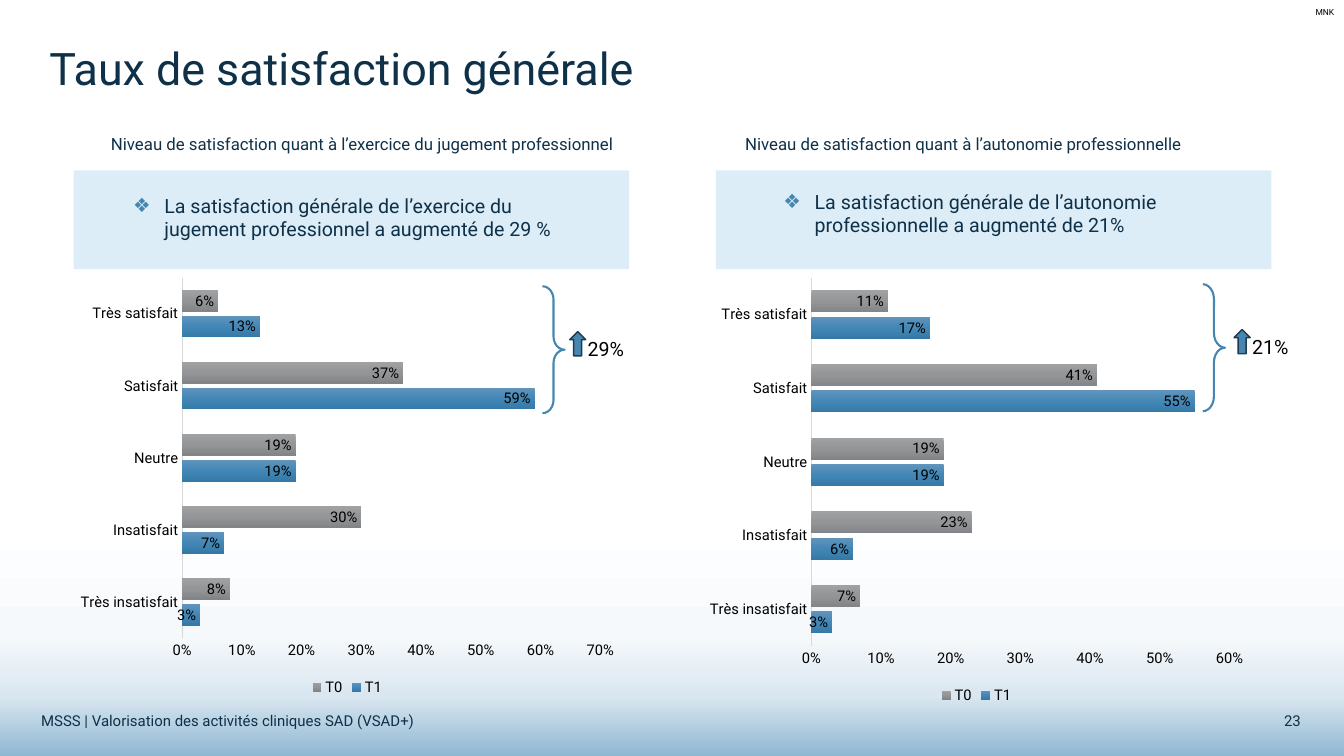
from lxml import etree
from pptx import Presentation
from pptx import util as u
from pptx.chart.data import CategoryChartData
from pptx.dml.color import RGBColor
from pptx.enum import chart as ch, shapes, text
from pptx.oxml.ns import qn

UNIT = 0.1
FONT = "Roboto"
NAVY, BLUE, BLACK = "0E3149", "4786B1", "000000"
CATEGORIES = ["Très insatisfait", "Insatisfait", "Neutre", "Satisfait", "Très satisfait"]
BACKDROP = [(69, "FFFFFF"), (84, "F6F9FB"), (92, "DAE7F0"), (100, "8FB7D2")]
T0_STOPS = [(0, "9FA1A2"), (50, "939597"), (100, "828487")]
T1_STOPS = [(0, "6194BC"), (50, "4287B6"), (100, "3679A7")]


def color(value):
    """Turn a hex string into a colour."""
    return RGBColor.from_string(value)


def grid(*cells):
    """Turn grid columns and rows into lengths."""
    return [u.Inches(c * UNIT) for c in cells]


def style(font, size, value=BLACK):
    """Set the typeface, size and colour of a font."""
    font.name, font.size, font.bold = FONT, u.Pt(size), False
    font.color.rgb = color(value)


def shade(fill, element, stops):
    """Fill from top to bottom with a list of colour stops."""
    fill.gradient()
    fill.gradient_angle = 270
    gs_list = next(element.iter(qn("a:gsLst")))
    for gs in list(gs_list):
        gs_list.remove(gs)
    for share, value in stops:
        gs = etree.SubElement(gs_list, qn("a:gs"), pos=str(share * 1000))
        etree.SubElement(gs, qn("a:srgbClr"), val=value)


def fill_placeholder(sp, cells, words, size):
    """Place a placeholder on the grid and write its paragraph."""
    sp.left, sp.top, sp.width, sp.height = grid(*cells)
    tf = sp.text_frame
    tf.text = words
    tf.auto_size = text.MSO_AUTO_SIZE.NONE
    tf.vertical_anchor = text.MSO_ANCHOR.TOP
    p = tf.paragraphs[0]
    p.alignment, p.space_before = text.PP_ALIGN.LEFT, u.Pt(0)
    return tf, p


def add_title(s, words):
    """Write the slide title."""
    tf, p = fill_placeholder(s.shapes.title, (3.9, 3.6, 125.5, 6.8), words, 32)
    tf.vertical_anchor = text.MSO_ANCHOR.MIDDLE
    p.line_spacing = 0.9
    style(p.font, 32, NAVY)


def add_heading(sp, col, words):
    """Write the heading above a chart."""
    _, p = fill_placeholder(sp, (col, 12.8, 55.1, 3), words, 12)
    style(p.font, 12, NAVY)


def add_finding(sp, col, inset, words):
    """Write a bulleted finding on a pale panel."""
    left, top, right = inset
    tf, p = fill_placeholder(sp, (col, 16.9, 55.1, 9.8), words, 14)
    sp.fill.solid()
    sp.fill.fore_color.rgb = color("DCEDF8")
    tf.margin_left, tf.margin_top, tf.margin_right = grid(left, top, right)
    pr = p._p.get_or_add_pPr()
    pr.set("marL", str(u.Inches(0.31)))
    pr.set("indent", str(-u.Inches(0.31)))
    bullet_color = etree.SubElement(pr, qn("a:buClr"))
    etree.SubElement(bullet_color, qn("a:srgbClr"), val=BLUE)
    etree.SubElement(pr, qn("a:buChar"), char="❖")
    style(p.font, 14, NAVY)


def add_text(s, cells, words, size, value=BLACK, align=text.PP_ALIGN.LEFT):
    """Add a one-line text box."""
    tf = s.shapes.add_textbox(*grid(*cells)).text_frame
    tf.word_wrap = True
    p = tf.paragraphs[0]
    p.text, p.alignment = words, align
    style(p.font, size, value)


def add_bars(s, cells, top_value, t0, t1):
    """Add a clustered bar chart of T0 against T1."""
    data = CategoryChartData(number_format="0%")
    data.categories = CATEGORIES
    data.add_series("T1", t1)
    data.add_series("T0", t0)
    chart = s.shapes.add_chart(ch.XL_CHART_TYPE.BAR_CLUSTERED, *grid(*cells), data).chart
    style(chart.font, 10.5)
    chart.has_title = False
    chart.has_legend = True
    chart.legend.position = ch.XL_LEGEND_POSITION.BOTTOM
    chart.legend.include_in_layout = False
    for axis in (chart.category_axis, chart.value_axis):
        axis.has_major_gridlines = False
        axis.major_tick_mark = axis.minor_tick_mark = ch.XL_TICK_MARK.NONE
    chart.category_axis.format.line.color.rgb = color("D9D9D9")
    chart.category_axis.format.line.width = u.Pt(1)
    axis = chart.value_axis
    axis.format.line.fill.background()
    axis.minimum_scale, axis.maximum_scale, axis.major_unit = 0, top_value, 0.1
    axis.tick_labels.number_format = "0%"
    axis.tick_labels.number_format_is_linked = False
    plot = chart.plots[0]
    plot.gap_width, plot.overlap, plot.vary_by_categories = 115, -20, False
    for series, stops in zip(plot.series, (T1_STOPS, T0_STOPS)):
        shade(series.format.fill, series._element, stops)
        labels = series.data_labels
        labels.show_value = True
        labels.position = ch.XL_LABEL_POSITION.INSIDE_END
        labels.number_format, labels.number_format_is_linked = "0%", False
        style(labels.font, 10.5)


def add_outline(s, kind, cells, line, width):
    """Add an unfilled preset shape."""
    sp = s.shapes.add_shape(kind, *grid(*cells))
    sp.shadow.inherit = False
    sp.fill.background()
    sp.line.color.rgb = color(line)
    sp.line.width = u.Pt(width)
    return sp


def add_increase(s, col, row, arrow_col, bend, words):
    """Bracket the satisfied answers and state their increase."""
    brace = add_outline(s, shapes.MSO_SHAPE.RIGHT_BRACE, (col, row, 2.2, 12.6), BLUE, 1.5)
    brace.adjustments[0] = bend
    add_text(s, (arrow_col + 0.8, row + 4.5, 7, 3.4), words, 14)
    arrow = add_outline(s, shapes.MSO_SHAPE.UP_ARROW, (arrow_col, row + 4.5, 1.6, 2.4), "1F3B4E", 1)
    arrow.fill.solid()
    arrow.fill.fore_color.rgb = color(BLUE)


def main():
    """Build and save the slide."""
    prs = Presentation()
    prs.slide_width, prs.slide_height = u.Inches(13.33), u.Inches(7.5)
    s = prs.slides.add_slide(prs.slide_layouts.get_by_name("Comparison"))
    shade(s.background.fill, s._element, BACKDROP)
    add_title(s, "Taux de satisfaction générale")

    _, left_heading, left_finding, right_heading, right_finding = list(s.placeholders)[:5]
    add_heading(left_heading, 10, "Niveau de satisfaction quant à l’exercice du jugement professionnel")
    add_heading(right_heading, 72.9, "Niveau de satisfaction quant à l’autonomie professionnelle")
    add_finding(left_finding, 7.3, (5.9, 2.3, 5.9),
                "La satisfaction générale de l’exercice du jugement professionnel a augmenté de 29 %")
    add_finding(right_finding, 71, (6.7, 1.9, 5.1),
                "La satisfaction générale de l’autonomie professionnelle a augmenté de 21%")

    add_bars(s, (6.9, 26.7, 55.1, 42.7), 0.7,
             t0=(0.08, 0.3, 0.19, 0.37, 0.06), t1=(0.03, 0.07, 0.19, 0.59, 0.13))
    add_bars(s, (69.3, 26.7, 55.1, 43.5), 0.6,
             t0=(0.07, 0.23, 0.19, 0.41, 0.11), t1=(0.03, 0.06, 0.19, 0.55, 0.17))
    add_increase(s, 53.8, 28.4, 56.5, 0.6, "29%")
    add_increase(s, 119.3, 28.2, 122.4, 0.67, "21%")

    add_text(s, (3.1, 70.1, 98.8, 2.8), "MSSS | Valorisation des activités cliniques SAD (VSAD+)", 10.7, NAVY)
    add_text(s, (122.2, 70.1, 7.8, 2.8), "23", 10.7, NAVY, text.PP_ALIGN.RIGHT)
    add_text(s, (129.5, 0.2, 3.9, 2), "MNK", 6)
    prs.save("out.pptx")


if __name__ == "__main__":
    main()
